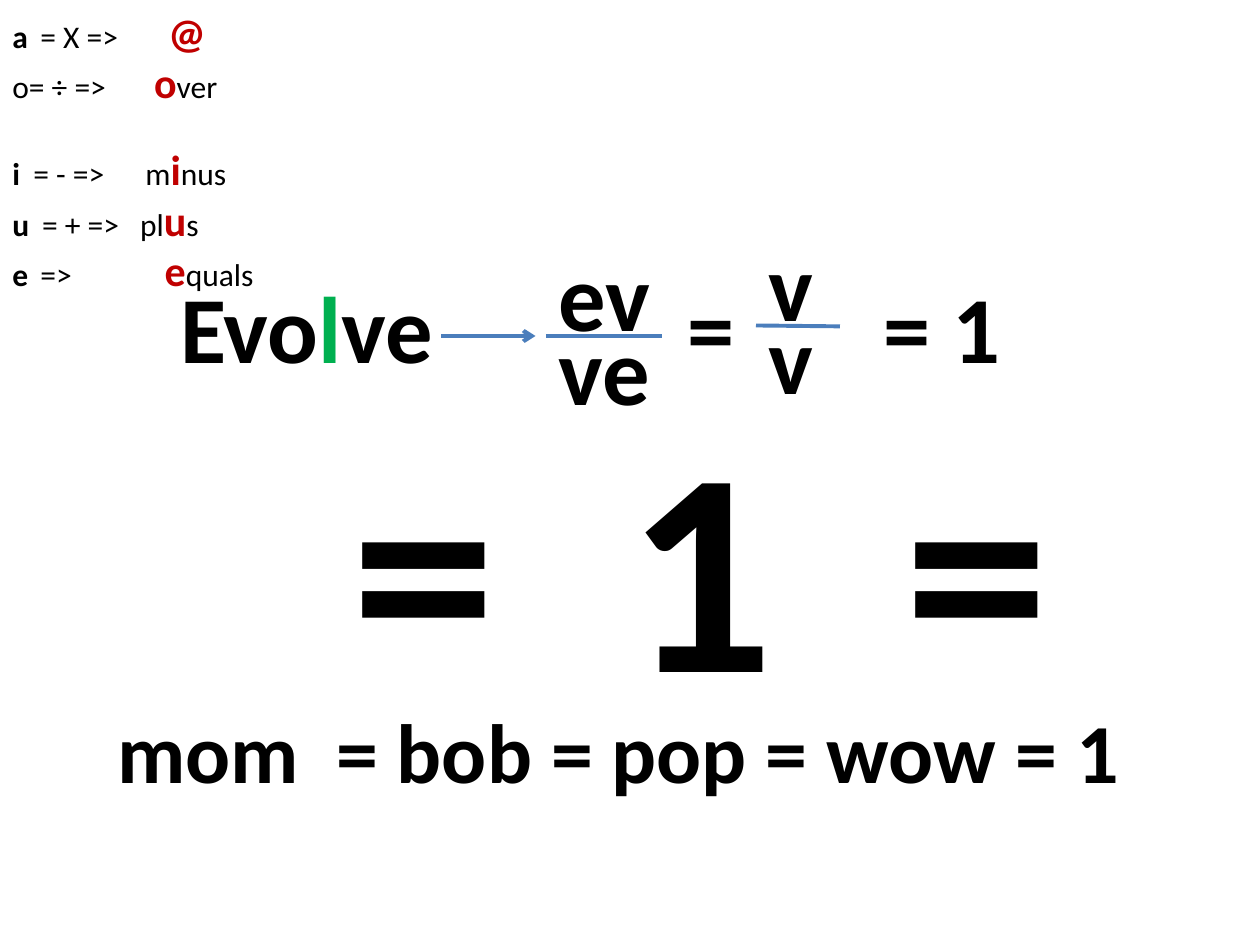
from lxml import etree
from pptx import Presentation
from pptx.dml.color import RGBColor
from pptx.enum.shapes import MSO_CONNECTOR
from pptx.oxml.ns import qn
from pptx.util import Pt

LINE = MSO_CONNECTOR.STRAIGHT
BLACK, RED, GREEN, BLUE = "000000", "C00000", "00B050", "4B7EBC"


def paint(color, code):
    color.rgb = RGBColor.from_string(code)


class Deck:
    """Holds the style and the current slide, and draws its elements."""

    font = "Calibri"
    weight = 2.25

    def __init__(self, wide, high):
        self.file = Presentation()
        self.file.slide_width, self.file.slide_height = Pt(wide), Pt(high)
        self.slide = self.file.slides.add_slide(self.file.slide_layouts[6])
        self.shapes = self.slide.shapes

    def text(self, left, top, wide, high, rows, shapes=None):
        box = (shapes or self.shapes).add_textbox(Pt(left), Pt(top), Pt(wide), Pt(high))
        frame = box.text_frame
        frame.word_wrap = True
        for n, (runs, stops, gap) in enumerate(rows):
            para = frame.add_paragraph() if n else frame.paragraphs[0]
            para.space_after = Pt(gap)
            self.tabs(para, stops)
            for words, size, code, bold in runs:
                run = para.add_run()
                run.text = words
                run.font.name, run.font.size, run.font.bold = self.font, Pt(size), bold
                paint(run.font.color, code)

    def tabs(self, para, stops):
        if stops:
            tab_list = etree.SubElement(para._p.get_or_add_pPr(), qn("a:tabLst"))
            for stop in stops:
                etree.SubElement(tab_list, qn("a:tab"), pos=str(Pt(stop)), algn="l")

    def line(self, start, end, arrow=False, shapes=None):
        ends = [Pt(v) for v in (*start, *end)]
        line = (shapes or self.shapes).add_connector(LINE, *ends)
        paint(line.line.color, BLUE)
        line.line.width = Pt(self.weight)
        if arrow:
            etree.SubElement(line.line._get_or_add_ln(), qn("a:tailEnd"), type="arrow")
        etree.SubElement(line._element.spPr, qn("a:effectLst"))

    def ratio(self, left, over, under, words, wide, start, end):
        shapes = self.shapes.add_group_shape().shapes
        for top, word in zip((over, under), words):
            rows = [([(word, 54, BLACK, True)], (), 0)]
            self.text(left, top, wide, 72, rows, shapes)
        self.line(start, end, shapes=shapes)


def legend(key, rule, head, mark, tail, stops, gap=0):
    runs = [(key, 18, BLACK, True), (rule, 18, BLACK, False),
            ("\t" + head, 18, BLACK, False), (mark, 24, RED, True),
            (tail, 18, BLACK, False)]
    return [run for run in runs if run[0]], stops, gap


def main():
    deck = Deck(720, 540)
    deck.text(60, 396, 678, 66, [([("mom\t= bob = pop = wow = 1", 48, BLACK, True)], [125], 0)])
    deck.text(0, 0, 198, 153, [
        legend("a", "\t= X =>", "", "@", "", [16, 89]),
        legend("", "o= ÷ =>", "", "o", "ver", [81], 21),
        legend("i", "\t= - =>", "m", "i", "nus", [12, 76]),
        legend("u", "\t= + =>", "pl", "u", "s", [17, 73]),
        legend("e", "\t=>", "", "e", "quals", [16, 87]),
    ])
    evolve = [("Evo", 54, BLACK, True), ("l", 54, GREEN, True),
              ("ve\t=\t= 1", 54, BLACK, True)]
    deck.text(96, 150, 522, 325, [
        (evolve, [290, 402], 0),
        ([("\t=\t1\t=", 166, BLACK, True)], [97.5, 255, 414], 0),
    ])
    deck.ratio(432, 126, 168, "vv", 55, (432, 186), (480, 186.5))
    deck.line((252, 192), (306, 192), arrow=True)
    deck.ratio(312, 132, 174, ("ev", "ve"), 84, (312, 192), (378, 192))
    deck.file.save("out.pptx")


if __name__ == "__main__":
    main()
